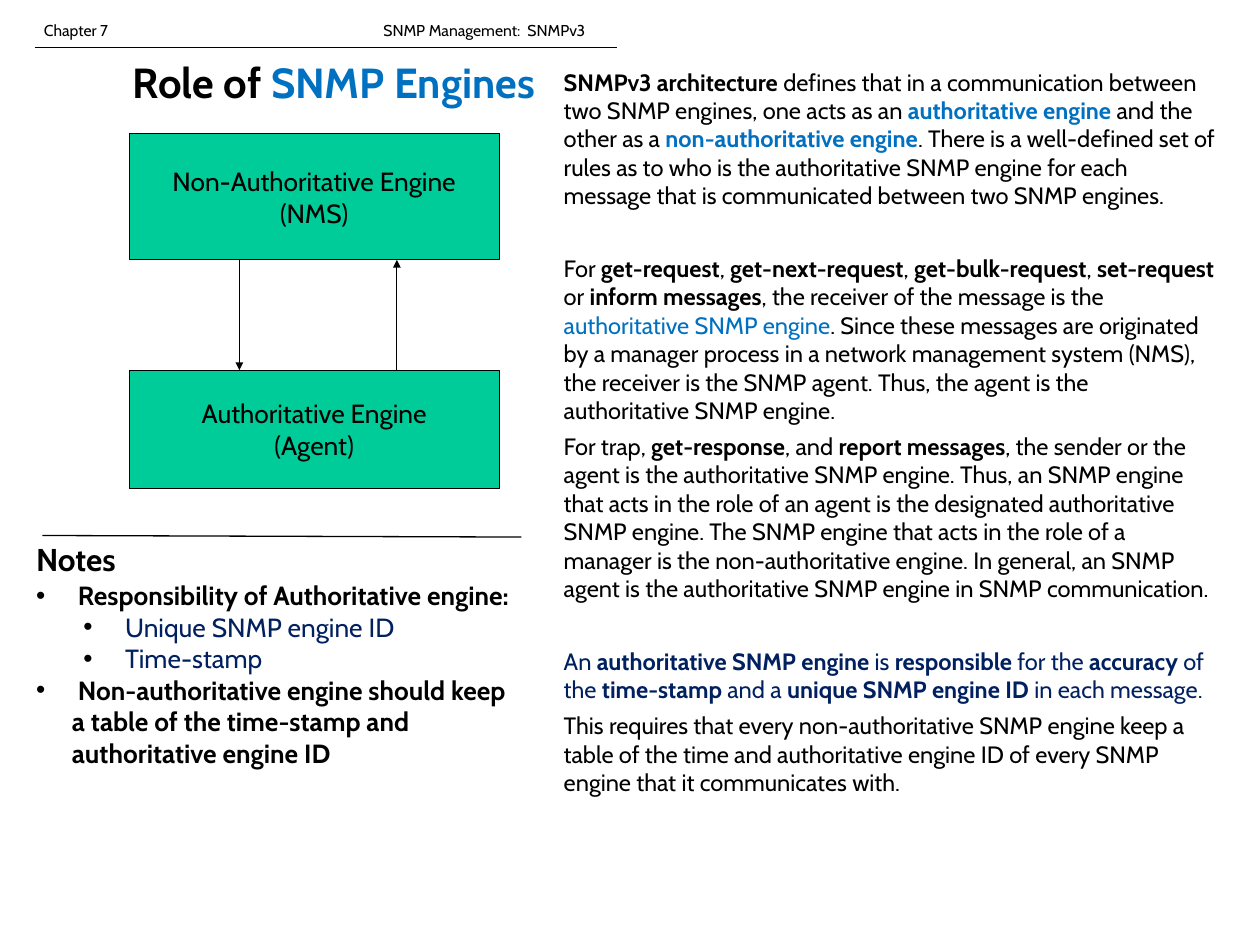
from lxml import etree
from pptx import Presentation
from pptx import util as u
from pptx.dml.color import RGBColor
from pptx.enum import shapes, text
from pptx.oxml import ns

BLACK = RGBColor(0x00, 0x00, 0x00)
BLUE = RGBColor(0x00, 0x70, 0xC0)
NAVY = RGBColor(0x00, 0x20, 0x60)
GREEN = RGBColor(0x00, 0xCC, 0x99)
COLUMNS, ROWS = 160, 120
CENTER = text.PP_ALIGN.CENTER


def plain(words, color=BLACK):
    return words, False, color


def bold(words, color=BLACK):
    return words, True, color


def add_child(parent, tag, **attributes):
    return etree.SubElement(parent, ns.qn(tag), **attributes)


class SlideBuilder:
    font = "Cabin"

    def __init__(self, presentation):
        self.column = presentation.slide_width / COLUMNS
        self.row = presentation.slide_height / ROWS
        self.slide = presentation.slides.add_slide(presentation.slide_layouts[6])

    def place(self, *cells):
        units = (self.column, self.row) * 2
        return [u.Emu(round(cell * unit)) for cell, unit in zip(cells, units)]

    def paragraph(self, frame, runs, size, first=False, align=None, before=0, after=0):
        paragraph = frame.paragraphs[0] if first else frame.add_paragraph()
        paragraph.alignment = align
        paragraph.space_before = u.Pt(before)
        paragraph.space_after = u.Pt(after)
        for words, is_bold, color in runs:
            run = paragraph.add_run()
            run.text = words
            run.font.name = self.font
            run.font.size = u.Pt(size)
            run.font.bold = is_bold
            run.font.color.rgb = color
        return paragraph

    def text_box(self, cells, paragraphs, size, align=None, after=0, gaps=()):
        frame = self.slide.shapes.add_textbox(*self.place(*cells)).text_frame
        frame.word_wrap = True
        for index, runs in enumerate(paragraphs):
            before = 28 if index in gaps else 0
            self.paragraph(frame, runs, size, index == 0, align, before, after)
        return frame

    def header(self, cells, runs, size, tab):
        frame = self.text_box(cells, [runs], size)
        properties = frame.paragraphs[0]._p.get_or_add_pPr()
        stops = add_child(properties, "a:tabLst")
        add_child(stops, "a:tab", pos=str(round(tab * self.column)), algn="l")

    def bullets(self, cells, items, size):
        frame = self.text_box(cells, [[run] for _, run in items], size)
        for paragraph, (level, _) in zip(frame.paragraphs, items):
            paragraph.level = level
            properties = paragraph._p.get_or_add_pPr()
            properties.set("marL", str(u.Inches(0.38 + 0.5 * level)))
            properties.set("indent", str(u.Inches(-0.38)))
            color = add_child(properties, "a:buClr")
            add_child(color, "a:srgbClr", val=str(BLACK))
            add_child(properties, "a:buFont", typeface="Arial")
            add_child(properties, "a:buChar", char="•")

    def box(self, cells, lines, size):
        shape = self.slide.shapes.add_shape(
            shapes.MSO_SHAPE.RECTANGLE, *self.place(*cells))
        shape.shadow.inherit = False
        shape.fill.solid()
        shape.fill.fore_color.rgb = GREEN
        shape.line.color.rgb = BLACK
        shape.line.width = u.Pt(0.75)
        frame = shape.text_frame
        frame.word_wrap = True
        frame.vertical_anchor = text.MSO_ANCHOR.MIDDLE
        for index, line in enumerate(lines):
            self.paragraph(frame, [plain(line)], size, index == 0, CENTER)

    def line(self, cells, width=1, arrow=False):
        connector = self.slide.shapes.add_connector(
            shapes.MSO_CONNECTOR.STRAIGHT, *self.place(*cells))
        connector.line.color.rgb = BLACK
        connector.line.width = u.Pt(width)
        properties = connector.element.spPr
        if arrow:
            add_child(properties.find(ns.qn("a:ln")), "a:tailEnd", type="triangle")
        add_child(properties, "a:effectLst")


ARCHITECTURE = [
    bold("SNMPv3 architecture "),
    plain("defines that in a communication between two SNMP engines, one acts as an "),
    bold("authoritative engine ", BLUE),
    plain("and the other as a "),
    bold("non-authoritative engine", BLUE),
    plain(". There is a well-defined set of rules as to who is the authoritative SNMP "
          "engine for each message that is communicated between two SNMP engines."),
]
REQUESTS = [
    plain("For "), bold("get-request"), plain(", "), bold("get-next-request"),
    plain(", "), bold("get-bulk-request"), plain(", "), bold("set-request"),
    plain(" or "), bold("inform messages"),
    plain(", the receiver of the message is the "),
    plain("authoritative SNMP engine", BLUE),
    plain(". Since these messages are originated by a manager process in a network "
          "management system (NMS), the receiver is the SNMP agent. Thus, the agent "
          "is the authoritative SNMP engine."),
]
RESPONSES = [
    plain("For trap, "), bold("get-response"), plain(", and "), bold("report messages"),
    plain(", the sender or the agent is the authoritative SNMP engine. Thus, an SNMP "
          "engine that acts in the role of an agent is the designated authoritative "
          "SNMP engine. The SNMP engine that acts in the role of a manager is the "
          "non-authoritative engine. In general, an SNMP agent is the authoritative "
          "SNMP engine in SNMP communication."),
]
RESPONSIBILITY = [
    plain("An ", NAVY), bold("authoritative SNMP engine ", NAVY), plain("is ", NAVY),
    bold("responsible ", NAVY), plain("for the ", NAVY), bold("accuracy ", NAVY),
    plain("of the ", NAVY), bold("time-stamp ", NAVY), plain("and a ", NAVY),
    bold("unique SNMP engine ID ", NAVY), plain("in each message.", NAVY),
]
REQUIREMENT = [
    plain("This requires that every non-authoritative SNMP engine keep a table of the "
          "time and authoritative engine ID of every SNMP engine that it "
          "communicates with."),
]
NOTES = [
    (0, bold(" Responsibility of Authoritative engine:")),
    (1, plain(" Unique SNMP engine ID", NAVY)),
    (1, plain(" Time-stamp", NAVY)),
    (0, bold(" Non-authoritative engine should keep a table of the time-stamp and "
             "authoritative engine ID")),
]


def main():
    presentation = Presentation()
    presentation.slide_width = u.Inches(13.33)
    presentation.slide_height = u.Inches(10)
    builder = SlideBuilder(presentation)

    builder.header((4.4, 2, 75.6, 3.6),
                   [plain("Chapter 7\tSNMP Management:  SNMPv3")], 12, tab=43.1)
    builder.line((4.4, 6, 78.4, 6))
    builder.text_box((5.4, 6.6, 74, 7.7),
                     [[bold("Role of "), bold("SNMP Engines", BLUE)]], 32, CENTER)

    builder.box((16.4, 17, 47, 16), ["Non-Authoritative Engine", "(NMS)"], 20)
    builder.box((16.4, 47, 47, 15), ["Authoritative Engine", "(Agent)"], 20)
    builder.line((30.4, 33, 30.4, 47), 0.75, arrow=True)
    builder.line((50.4, 47, 50.4, 33), 0.75, arrow=True)

    builder.line((5.4, 68, 66.2, 68.2))
    builder.text_box((3.4, 68, 14, 6), [[bold("Notes")]], 24)
    builder.bullets((3.4, 73, 62.8, 36), NOTES, 20)

    builder.text_box((70.4, 8, 85.2, 94.6),
                     [ARCHITECTURE, REQUESTS, RESPONSES, RESPONSIBILITY, REQUIREMENT],
                     18, after=6, gaps=(1, 3))
    presentation.save("out.pptx")


if __name__ == "__main__":
    main()
